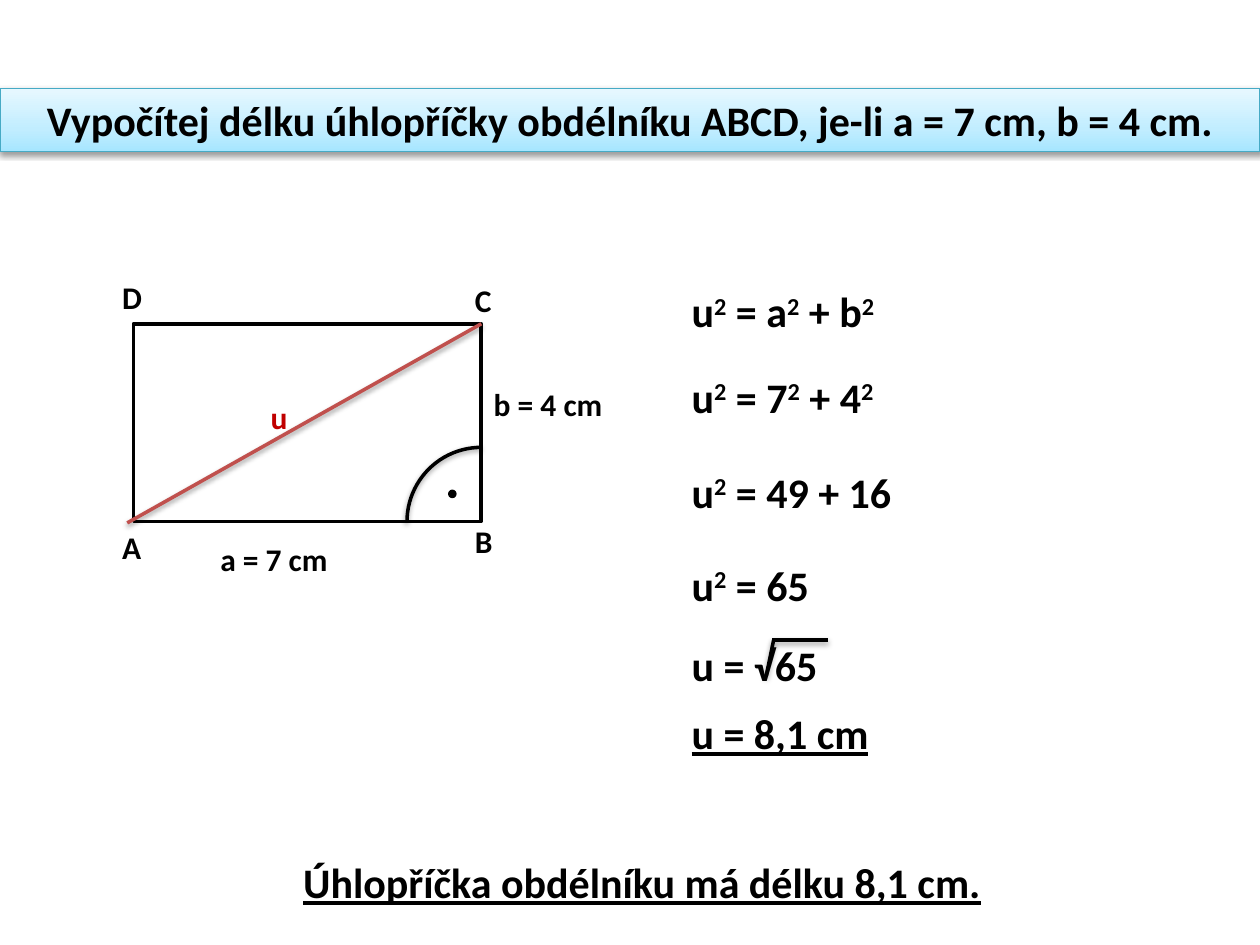
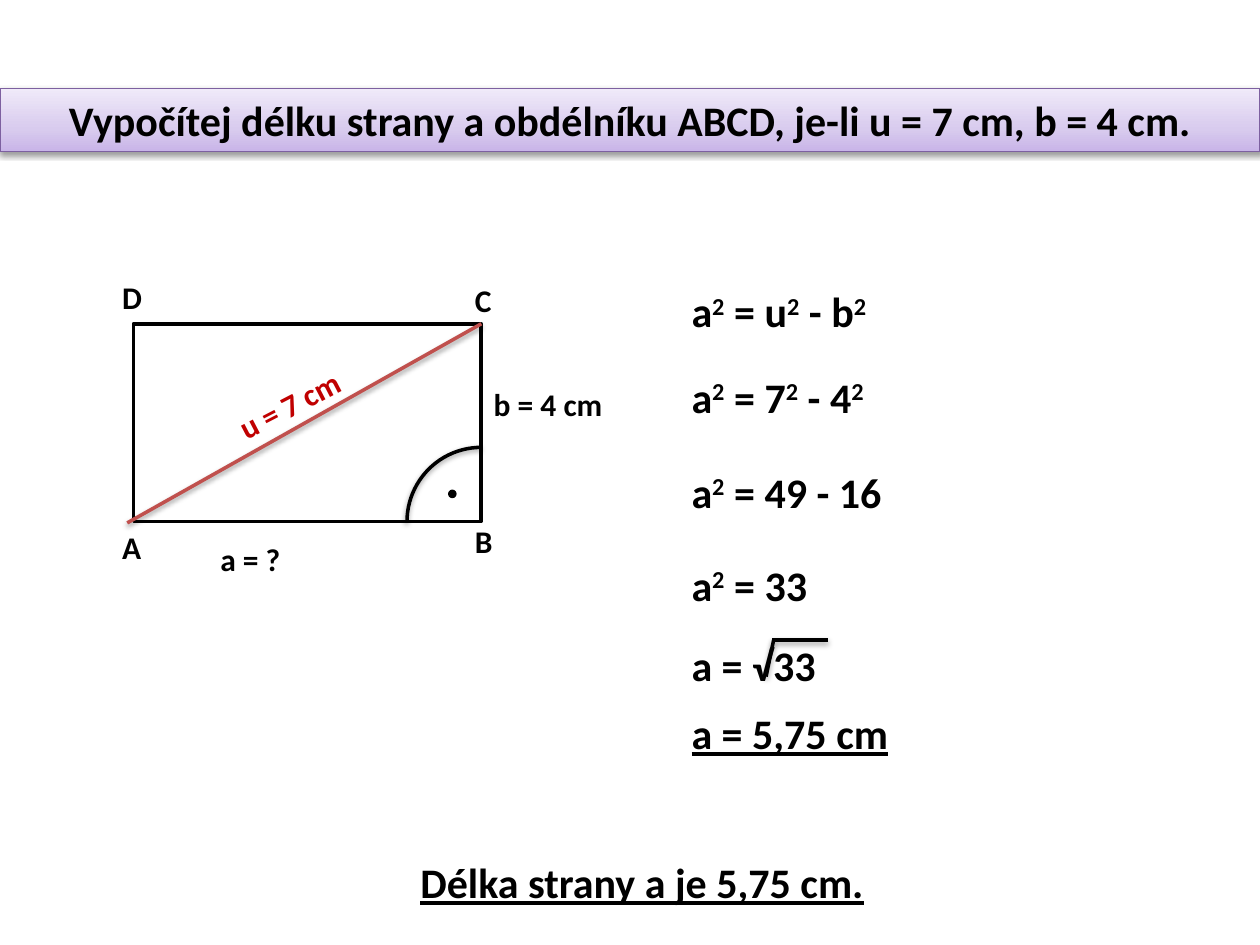
import copy
from dataclasses import dataclass
from typing import Any

import lxml.etree
import pptx
import pptx.dml.color
import pptx.enum.shapes
import pptx.enum.text
import pptx.oxml.ns
import pptx.util

# Shared style
FONT = "Calibri"
COLORS = {"ink": "000000", "paper": "FFFFFF", "diagonal": "C0504D", "diagonal label": "C00000"}
BANDS = {
    "blue": {"line": "46AAC5", "stops": ("A7E6FF", "C1EDFF", "E7F8FF")},
    "violet": {"line": "7D60A0", "stops": ("C9B5E8", "D8CBEE", "F0EAF9")},
}
STOP_POSITIONS = (0, 0.35, 1)
TITLE_SIZE, LABEL_SIZE, HEAVY_LINE = 24, 18, 2

# Grid of square cells: 10 columns by 7.5 rows
COLUMNS, ROWS = 10, 7.5
CELL = pptx.util.Inches(1)
STEP_LEFT, STEP_WIDTH = 5.39, 2.07
STEP_ROWS = (2.22, 2.9, 3.65, 4.39, 5.03, 5.57)
ROOT_STEP = 4
RECT_LEFT, RECT_TOP, RECT_WIDTH, RECT_HEIGHT = 1.06, 2.57, 2.76, 1.57
RECT_RIGHT, RECT_BOTTOM = RECT_LEFT + RECT_WIDTH, RECT_TOP + RECT_HEIGHT
ARC_SIZE, DOT_SIZE = 1.18, 0.04
RECTANGLE = pptx.enum.shapes.MSO_SHAPE.RECTANGLE
ARC = pptx.enum.shapes.MSO_SHAPE.ARC
OVAL = pptx.enum.shapes.MSO_SHAPE.OVAL
CENTER = pptx.enum.text.PP_ALIGN.CENTER


@dataclass(frozen=True)
class Label:
    text: str
    left: float
    top: float
    width: float = 0.39
    height: float = 0.4
    size: int = LABEL_SIZE
    color: str = "ink"
    rotation: float = 0
    underline: bool = False
    centered: bool = False


@dataclass(frozen=True)
class Problem:
    band: str
    title: str
    diagonal: Label
    side_a: str
    steps: tuple[str, ...]  # "²" marks a raised 2
    answer: str


CORNERS = (
    Label("A", 0.87, 4.14),
    Label("B", 3.67, 4.09),
    Label("C", 3.67, 2.18),
    Label("D", 0.87, 2.16),
)
PROBLEMS = (
    Problem(
        "blue",
        "Vypočítej délku úhlopříčky obdélníku ABCD, je-li a = 7 cm, b = 4 cm.",
        Label("u", 2.05, 3.11, color="diagonal label"),
        "a = 7 cm",
        ("u² = a² + b²", "u² = 7² + 4²", "u² = 49 + 16", "u² = 65", "u = √65", "u = 8,1 cm"),
        "Úhlopříčka obdélníku má délku 8,1 cm.",
    ),
    Problem(
        "violet",
        "Vypočítej délku strany a obdélníku ABCD, je-li u = 7 cm, b = 4 cm.",
        Label("u = 7 cm", 1.75, 2.95, 1.33, color="diagonal label", rotation=332.5),
        "a = ?",
        ("a² = u² - b²", "a² = 7² - 4²", "a² = 49 - 16", "a² = 33", "a = √33", "a = 5,75 cm"),
        "Délka strany a je 5,75 cm.",
    ),
)


def grid(*cells: float) -> list[int]:
    return [round(cell * CELL) for cell in cells]


def rgb(value: str) -> pptx.dml.color.RGBColor:
    return pptx.dml.color.RGBColor.from_string(value)


def set_shadow(item: Any, visible: bool = True) -> None:
    """Replace the theme effect by a soft shadow below, or by none."""
    qn = pptx.oxml.ns.qn
    properties = item._element.spPr
    effects = properties.find(qn("a:effectLst"))
    if effects is None:
        effects = lxml.etree.SubElement(properties, qn("a:effectLst"))
    if visible:
        shadow = lxml.etree.SubElement(
            effects, qn("a:outerShdw"), blurRad="40000", dist="20000", dir="5400000", rotWithShape="0"
        )
        color = lxml.etree.SubElement(shadow, qn("a:srgbClr"), val=COLORS["ink"])
        lxml.etree.SubElement(color, qn("a:alpha"), val="38000")


def set_line(item: Any, color: str, width: float = HEAVY_LINE) -> None:
    item.line.color.rgb = rgb(color)
    item.line.width = pptx.util.Pt(width)


def add_span(para: Any, text: str, label: Label, raised: bool = False) -> None:
    span = para.add_run()
    span.text = text
    font = span.font
    font.name, font.size, font.bold = FONT, pptx.util.Pt(label.size), True
    font.color.rgb = rgb(COLORS[label.color])
    if label.underline:
        font.underline = True
    if raised:
        span._r.get_or_add_rPr().set("baseline", "30000")


def add_label(shapes: Any, label: Label) -> None:
    box = shapes.add_textbox(*grid(label.left, label.top, label.width, label.height))
    box.rotation = label.rotation
    frame = box.text_frame
    frame.word_wrap = True
    frame.auto_size = pptx.enum.text.MSO_AUTO_SIZE.SHAPE_TO_FIT_TEXT
    para = frame.paragraphs[0]
    if label.centered:
        para.alignment = CENTER
    for index, part in enumerate(label.text.split("²")):
        if index:
            add_span(para, "2", label, raised=True)
        if part:
            add_span(para, part, label)


def add_line(shapes: Any, start: tuple[float, float], end: tuple[float, float], color: str = "ink") -> None:
    line = shapes.add_connector(pptx.enum.shapes.MSO_CONNECTOR.STRAIGHT, *grid(*start, *end))
    set_line(line, COLORS[color])
    set_shadow(line)


def add_outline(shapes: Any, kind: Any, place: tuple[float, ...], fill: str | None = None) -> Any:
    shape = shapes.add_shape(kind, *grid(*place))
    shape.shadow.inherit = False
    if fill:
        shape.fill.solid()
        shape.fill.fore_color.rgb = rgb(COLORS[fill])
    else:
        shape.fill.background()
    set_line(shape, COLORS["ink"])
    return shape


def format_title(page: Any, problem: Problem) -> None:
    title = page.shapes.title
    title.left, title.top, title.width, title.height = grid(0, 0.7, COLUMNS, 0.5)
    band = BANDS[problem.band]
    # Three-stop gradient, rising from the bottom edge
    title.fill.gradient()
    title.fill.gradient_angle = 90
    stop_list = title._element.spPr.find(".//" + pptx.oxml.ns.qn("a:gsLst"))
    stop_list.append(copy.deepcopy(stop_list[0]))
    for stop, position, color in zip(title.fill.gradient_stops, STOP_POSITIONS, band["stops"]):
        stop.position = position
        stop.color.rgb = rgb(color)
    set_line(title, band["line"], 0.75)
    set_shadow(title)
    frame = title.text_frame
    frame.word_wrap = True
    frame.auto_size = pptx.enum.text.MSO_AUTO_SIZE.NONE
    frame.vertical_anchor = pptx.enum.text.MSO_ANCHOR.MIDDLE
    para = frame.paragraphs[0]
    para.alignment = CENTER
    add_span(para, problem.title, Label(problem.title, 0, 0, size=TITLE_SIZE))


def draw_figure(page: Any, problem: Problem) -> None:
    shapes = page.shapes
    add_outline(shapes, RECTANGLE, (RECT_LEFT, RECT_TOP, RECT_WIDTH, RECT_HEIGHT), "paper")
    add_line(shapes, (1.01, 4.15), (RECT_RIGHT, RECT_TOP), "diagonal")
    # Right angle mark centred on corner B
    mark = shapes.add_group_shape().shapes
    arc_place = (RECT_RIGHT - ARC_SIZE / 2, RECT_BOTTOM - ARC_SIZE / 2, ARC_SIZE, ARC_SIZE)
    arc = add_outline(mark, ARC, arc_place)
    arc.rotation = 270
    set_shadow(arc)
    add_outline(mark, OVAL, (3.57, 3.9, DOT_SIZE, DOT_SIZE), "ink")
    # Corners and sides
    sides = (Label(problem.side_a, 1.65, 4.24, 1.54), Label("b = 4 cm", RECT_RIGHT, 3.01, 1.53))
    for label in (*CORNERS, problem.diagonal, *sides):
        add_label(shapes, label)


def draw_solution(page: Any, problem: Problem) -> None:
    last = len(problem.steps) - 1
    for index, (text, top) in enumerate(zip(problem.steps, STEP_ROWS)):
        is_root = index == ROOT_STEP
        shapes = page.shapes.add_group_shape().shapes if is_root else page.shapes
        add_label(
            shapes,
            Label(text, STEP_LEFT, top, STEP_WIDTH, 0.5, TITLE_SIZE, underline=index == last),
        )
        if is_root:  # bar and stem of the root sign
            add_line(shapes, (6.13, 5.08), (6.57, 5.08))
            add_line(shapes, (6.14, 5.08), (6.08, 5.37))
    add_label(
        page.shapes,
        Label(problem.answer, 0.47, 6.75, 9.25, 0.5, TITLE_SIZE, underline=True, centered=True),
    )


def main() -> None:
    deck = pptx.Presentation()
    deck.slide_width, deck.slide_height = grid(COLUMNS, ROWS)
    title_only = deck.slide_layouts[5]
    for problem in PROBLEMS:
        page = deck.slides.add_slide(title_only)
        format_title(page, problem)
        draw_figure(page, problem)
        draw_solution(page, problem)
    deck.save("out.pptx")


if __name__ == "__main__":
    main()
